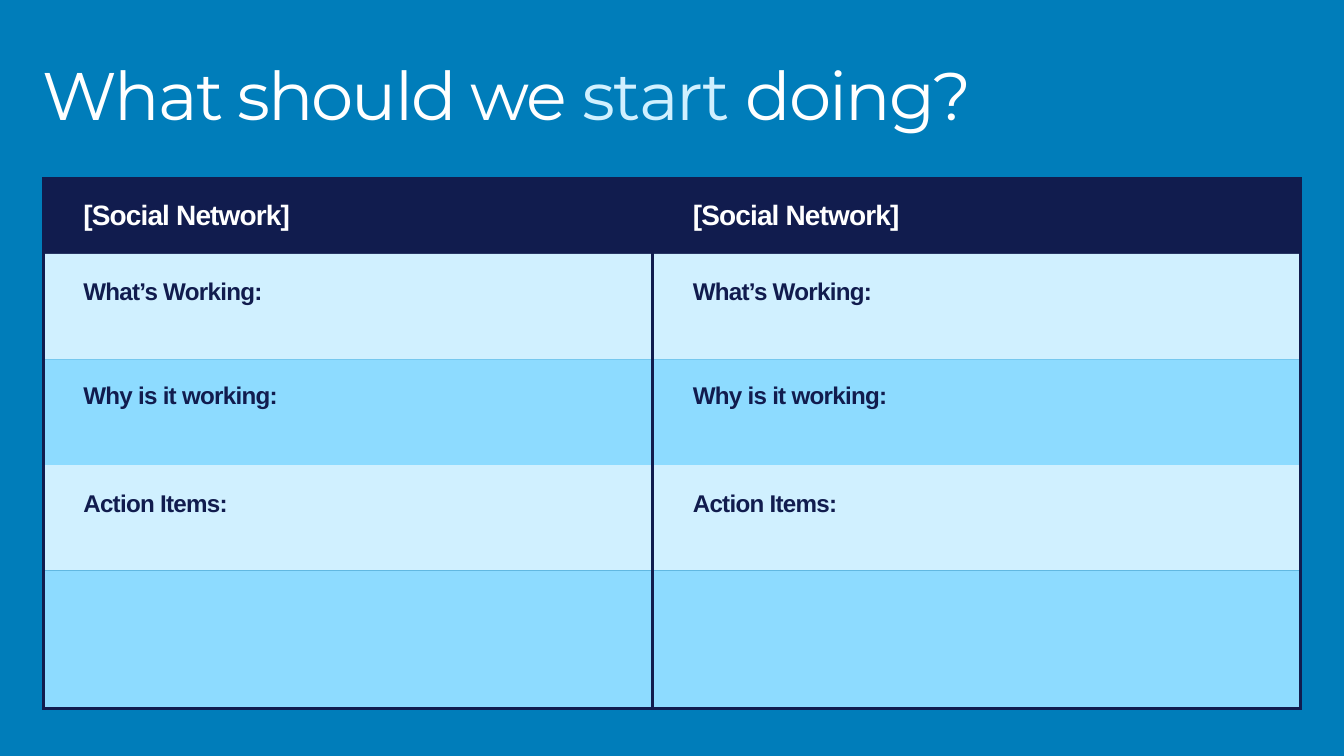
from pptx import Presentation
from pptx.dml.color import RGBColor
from pptx.enum.shapes import MSO_CONNECTOR, MSO_SHAPE
from pptx.enum.text import MSO_ANCHOR, MSO_AUTO_SIZE, PP_ALIGN
from pptx.oxml.ns import qn
from pptx.util import Inches, Pt
from lxml.etree import SubElement

NAVY, PALE, SKY, WHITE, BLUE = "111C4E", "D0F0FF", "8DDBFF", "FFFFFF", "007DBA"
LEFT, WIDTH = 0.63, 18.74
BANDS = [(1.14, NAVY), (1.57, PALE), (1.57, SKY), (1.57, PALE), (2.06, SKY)]
LABELS = [("What’s Working:", 4.18), ("Why is it working:", 5.73), ("Action Items:", 7.34)]


def paint(fmt, color):
    """Set a solid colour on a fill."""
    fmt.solid()
    fmt.fore_color.rgb = RGBColor.from_string(color)


def write(shape, runs, size=25.9, font="Arial", bold=False, gap=-0.8):
    """Write (text, colour) runs as one paragraph in a shape."""
    frame = shape.text_frame
    frame.word_wrap = True
    frame.auto_size = MSO_AUTO_SIZE.NONE
    frame.vertical_anchor = MSO_ANCHOR.TOP
    frame.margin_left = frame.margin_right = frame.margin_top = frame.margin_bottom = 0
    para = frame.paragraphs[0]
    para.alignment = PP_ALIGN.LEFT
    para.line_spacing = Pt(size)
    para.space_before = Pt(0)
    for text, color in runs:
        run = para.add_run()
        run.text = text
        run.font.size, run.font.name, run.font.bold = Pt(size), font, bold
        paint(run.font.fill, color)
        run._r.get_or_add_rPr().set("spc", str(round(gap * 100)))


def label(slide, text, x, y, w, h, color=NAVY, **style):
    """Add a bold text box."""
    box = slide.shapes.add_textbox(Inches(x), Inches(y), Inches(w), Inches(h))
    write(box, [(text, color)], bold=True, **style)


def band(slide, y, h, color):
    """Add a full-width row without an outline."""
    row = slide.shapes.add_shape(
        MSO_SHAPE.RECTANGLE, Inches(LEFT), Inches(y), Inches(WIDTH), Inches(h))
    row.shadow.inherit = False
    paint(row.fill, color)
    row.line.fill.background()


def rule(slide, x1, y1, x2, y2):
    """Add a straight navy line."""
    line = slide.shapes.add_connector(
        MSO_CONNECTOR.STRAIGHT, Inches(x1), Inches(y1), Inches(x2), Inches(y2))
    line.line.width = Pt(3)
    paint(line.line.fill, NAVY)
    SubElement(line._element.spPr, qn("a:effectLst"))


def main():
    """Build the slide and save it."""
    deck = Presentation()
    deck.slide_width, deck.slide_height = Inches(20), Inches(11.25)
    slide = deck.slides.add_slide(deck.slide_layouts[5])
    paint(slide.background.fill, BLUE)

    title = slide.shapes.title
    title.left, title.top = Inches(LEFT), Inches(1)
    title.width, title.height = Inches(16.91), Inches(2.02)
    write(title, [("What should we ", WHITE), ("start", PALE), (" doing?", WHITE)],
          size=72, font="Montserrat", gap=-2.1)

    top = y = 2.64
    for h, color in BANDS:
        band(slide, y, h, color)
        y += h

    for x in (1.24, 10.31):
        label(slide, "[Social Network]", x, 3.02, 3.95, 0.43, WHITE, size=30, gap=-0.9)
        for text, at in LABELS:
            label(slide, text, x, at, 7.9, 0.36)

    right = LEFT + WIDTH
    for x in (LEFT + 0.02, 9.71, right - 0.02):
        rule(slide, x, y, x, top)
    for at in (top + 0.01, y - 0.01):
        rule(slide, right, at, LEFT, at)

    deck.save("out.pptx")


if __name__ == "__main__":
    main()
